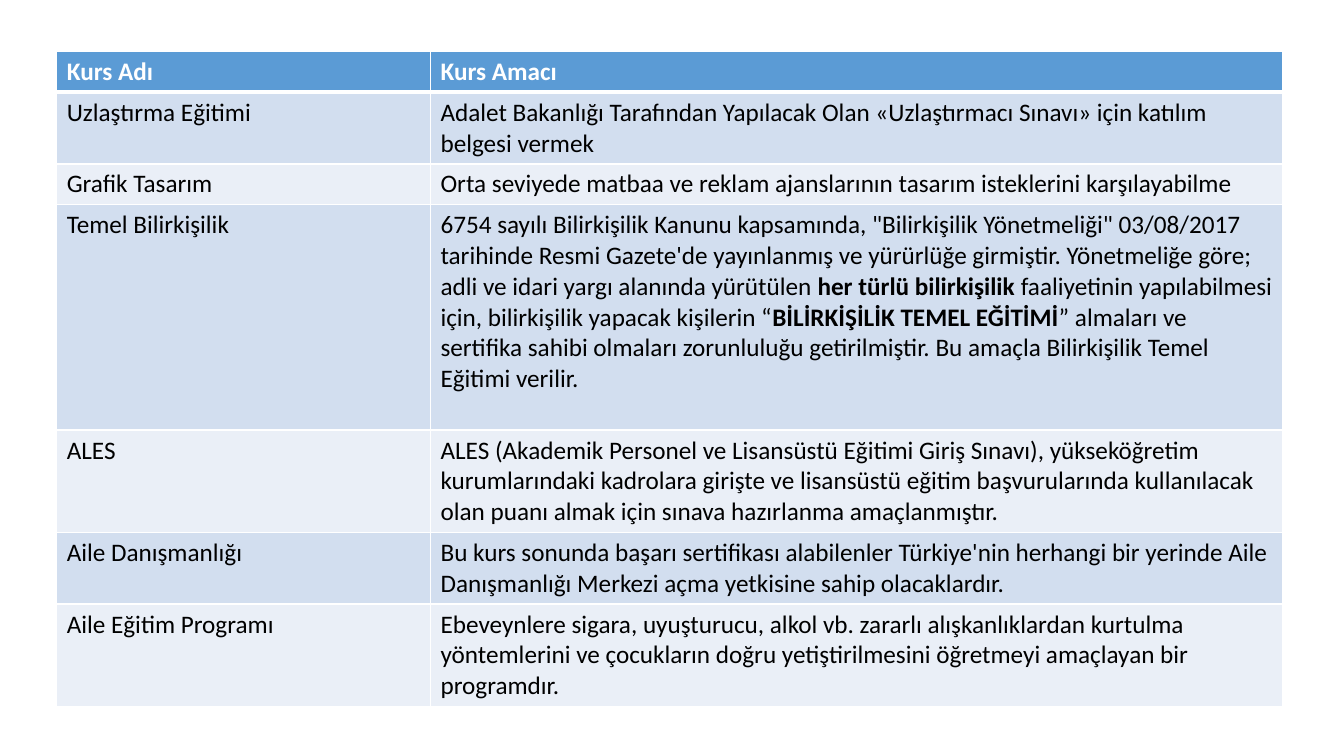
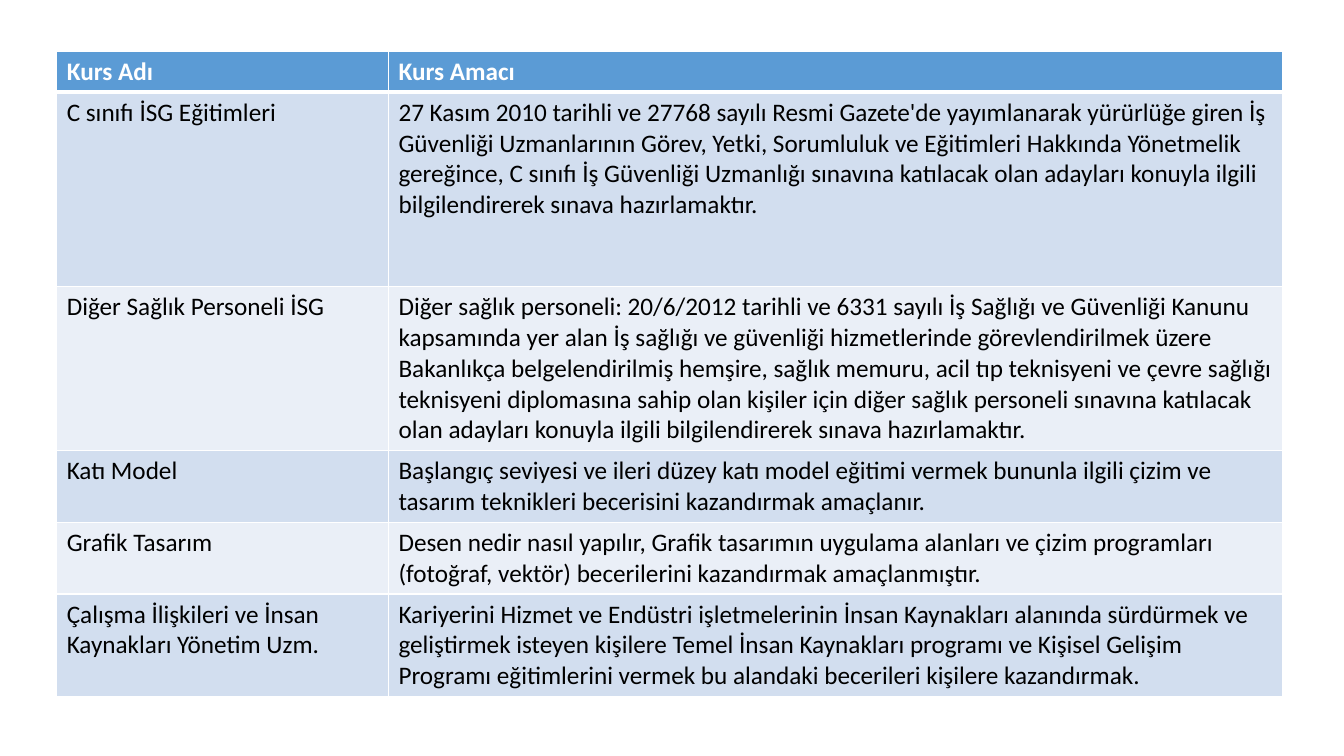
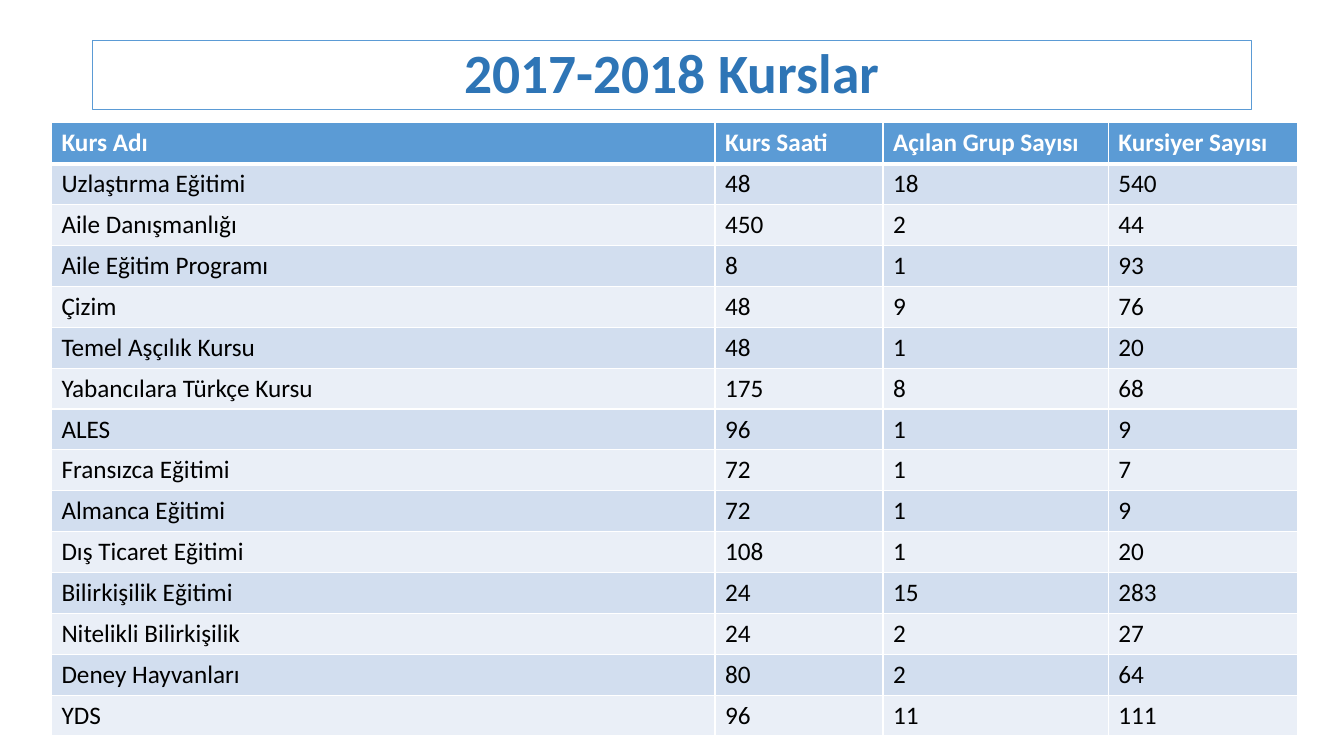
from pptx import Presentation
from pptx.dml.color import RGBColor
from pptx.enum import text as text_enum
from pptx.oxml import parse_xml
from pptx.oxml.ns import nsdecls
from pptx.util import Pt

# Shared style
FONT = "Calibri"
BODY_SIZE = 18
LINE_HEIGHT = 21.96
CELL_MARGINS = 7.2
WHITE = RGBColor(0xFF, 0xFF, 0xFF)
BLACK = RGBColor(0x00, 0x00, 0x00)
HEADER_BLUE = RGBColor(0x5B, 0x9B, 0xD5)
TITLE_BLUE = RGBColor(0x2E, 0x75, 0xB6)
BANDS = (RGBColor(0xD2, 0xDE, 0xEF), RGBColor(0xEA, 0xEF, 0xF7))
TITLE_ONLY, BLANK = 5, 6

# Content: "lines" is the height of each body row in text lines, ** marks bold
PURPOSE_HEADER = ("Kurs Adı", "Kurs Amacı")
SLIDES = [
    {
        "at": (40.5, 36.75),
        "widths": (267, 609),
        "header": PURPOSE_HEADER,
        "lines": (2, 1, 7, 3, 2, 3),
        "rows": [
            ("Uzlaştırma Eğitimi",
             "Adalet Bakanlığı Tarafından Yapılacak Olan «Uzlaştırmacı Sınavı» "
             "için katılım belgesi vermek"),
            ("Grafik Tasarım",
             "Orta seviyede matbaa ve reklam ajanslarının tasarım isteklerini "
             "karşılayabilme"),
            ("Temel Bilirkişilik",
             "6754 sayılı Bilirkişilik Kanunu kapsamında, \"Bilirkişilik "
             "Yönetmeliği\" 03/08/2017 tarihinde Resmi Gazete'de yayınlanmış ve "
             "yürürlüğe girmiştir. Yönetmeliğe göre; adli ve idari yargı alanında "
             "yürütülen **her türlü bilirkişilik** faaliyetinin yapılabilmesi "
             "için, bilirkişilik yapacak kişilerin “**BİLİRKİŞİLİK TEMEL EĞİTİMİ**” "
             "almaları ve sertifika sahibi olmaları zorunluluğu getirilmiştir. "
             "Bu amaçla Bilirkişilik Temel Eğitimi verilir."),
            ("ALES",
             "ALES (Akademik Personel ve Lisansüstü Eğitimi Giriş Sınavı), "
             "yükseköğretim kurumlarındaki kadrolara girişte ve lisansüstü eğitim "
             "başvurularında kullanılacak olan puanı almak için sınava hazırlanma "
             "amaçlanmıştır."),
            ("Aile Danışmanlığı",
             "Bu kurs sonunda başarı sertifikası alabilenler Türkiye'nin herhangi "
             "bir yerinde Aile Danışmanlığı Merkezi açma yetkisine sahip "
             "olacaklardır."),
            ("Aile Eğitim Programı",
             "Ebeveynlere sigara, uyuşturucu, alkol vb. zararlı alışkanlıklardan "
             "kurtulma yöntemlerini ve çocukların doğru yetiştirilmesini öğretmeyi "
             "amaçlayan bir programdır."),
        ],
    },
    {
        "at": (40.5, 36.75),
        "widths": (237, 639),
        "header": PURPOSE_HEADER,
        "lines": (6, 5, 2, 2, 3),
        "rows": [
            ("C sınıfı İSG Eğitimleri",
             "27 Kasım 2010 tarihli ve 27768 sayılı Resmi Gazete'de yayımlanarak "
             "yürürlüğe giren İş Güvenliği Uzmanlarının Görev, Yetki, Sorumluluk "
             "ve Eğitimleri Hakkında Yönetmelik gereğince, C sınıfı İş Güvenliği "
             "Uzmanlığı sınavına katılacak olan adayları konuyla ilgili "
             "bilgilendirerek sınava hazırlamaktır."),
            ("Diğer Sağlık Personeli İSG",
             "Diğer sağlık personeli: 20/6/2012 tarihli ve 6331 sayılı İş Sağlığı "
             "ve Güvenliği Kanunu kapsamında yer alan İş sağlığı ve güvenliği "
             "hizmetlerinde görevlendirilmek üzere Bakanlıkça belgelendirilmiş "
             "hemşire, sağlık memuru, acil tıp teknisyeni ve çevre sağlığı "
             "teknisyeni diplomasına sahip olan kişiler için diğer sağlık "
             "personeli sınavına katılacak olan adayları konuyla ilgili "
             "bilgilendirerek sınava hazırlamaktır."),
            ("Katı Model",
             "Başlangıç seviyesi ve ileri düzey katı model eğitimi vermek bununla "
             "ilgili çizim ve tasarım teknikleri becerisini kazandırmak amaçlanır."),
            ("Grafik Tasarım",
             "Desen nedir nasıl yapılır, Grafik tasarımın uygulama alanları ve "
             "çizim programları (fotoğraf, vektör) becerilerini kazandırmak "
             "amaçlanmıştır."),
            ("Çalışma İlişkileri ve İnsan Kaynakları Yönetim Uzm.",
             "Kariyerini Hizmet ve Endüstri işletmelerinin İnsan Kaynakları "
             "alanında sürdürmek ve geliştirmek isteyen kişilere Temel İnsan "
             "Kaynakları programı ve Kişisel Gelişim Programı eğitimlerini vermek "
             "bu alandaki becerileri kişilere kazandırmak."),
        ],
    },
    {
        "title": "2017-2018 Kurslar",
        "at": (36.75, 87.75),
        "widths": (474, 120, 161, 135.5),
        "header": ("Kurs Adı", "Kurs Saati", "Açılan Grup Sayısı", "Kursiyer Sayısı"),
        "lines": (1,) * 14,
        "rows": [
            ("Uzlaştırma Eğitimi", 48, 18, 540),
            ("Aile Danışmanlığı", 450, 2, 44),
            ("Aile Eğitim Programı", 8, 1, 93),
            ("Çizim", 48, 9, 76),
            ("Temel Aşçılık Kursu", 48, 1, 20),
            ("Yabancılara Türkçe Kursu", 175, 8, 68),
            ("ALES", 96, 1, 9),
            ("Fransızca Eğitimi", 72, 1, 7),
            ("Almanca Eğitimi", 72, 1, 9),
            ("Dış Ticaret Eğitimi", 108, 1, 20),
            ("Bilirkişilik Eğitimi", 24, 15, 283),
            ("Nitelikli Bilirkişilik", 24, 2, 27),
            ("Deney Hayvanları", 80, 2, 64),
            ("YDS", 96, 11, 111),
        ],
    },
]


def write(frame, content, size=BODY_SIZE, color=BLACK, bold=False, align=None, spacing=None):
    """Fill a text frame; parts between ** are bold."""
    paragraph = frame.paragraphs[0]
    paragraph.alignment = align
    paragraph.line_spacing = spacing
    for index, part in enumerate(content.split("**")):
        run = paragraph.add_run()
        run.text = part
        run.font.name = FONT
        run.font.size = Pt(size)
        run.font.bold = bold or index % 2 == 1
        run.font.color.rgb = color


def add_borders(cell, top=1, bottom=1):
    properties = cell._tc.get_or_add_tcPr()
    for side, width in (("L", 1), ("R", 1), ("T", top), ("B", bottom)):
        properties.append(parse_xml(
            f'<a:ln{side} {nsdecls("a")} w="{Pt(width)}"><a:solidFill>'
            f'<a:srgbClr val="{WHITE}"/></a:solidFill></a:ln{side}>'))


def add_course_table(slide, at, widths, header, lines, rows):
    heights = [CELL_MARGINS + LINE_HEIGHT * count for count in (1, *lines)]
    left, top = at
    table = slide.shapes.add_table(
        len(heights), len(widths), Pt(left), Pt(top),
        Pt(sum(widths)), Pt(sum(heights))).table
    for column, width in zip(table.columns, widths):
        column.width = Pt(width)
    for row_index, values in enumerate([header, *rows]):
        is_header = row_index == 0
        table.rows[row_index].height = Pt(heights[row_index])
        for column_index, value in enumerate(values):
            cell = table.cell(row_index, column_index)
            add_borders(cell, top=3 if row_index == 1 else 1, bottom=3 if is_header else 1)
            cell.fill.solid()
            cell.fill.fore_color.rgb = HEADER_BLUE if is_header else BANDS[(row_index - 1) % 2]
            write(cell.text_frame, str(value), color=WHITE if is_header else BLACK, bold=is_header)


def format_title(title, content):
    title.left, title.top, title.width, title.height = Pt(66), Pt(28.75), Pt(828), Pt(49.75)
    title.line.color.rgb = HEADER_BLUE
    title.line.width = Pt(0.75)
    frame = title.text_frame
    frame.auto_size = text_enum.MSO_AUTO_SIZE.NONE
    frame.vertical_anchor = text_enum.MSO_ANCHOR.MIDDLE
    write(frame, content, size=39.6, color=TITLE_BLUE, bold=True,
          align=text_enum.PP_ALIGN.CENTER, spacing=0.9)


def main():
    presentation = Presentation()
    presentation.slide_width, presentation.slide_height = Pt(960), Pt(540)
    for content in SLIDES:
        title = content.get("title")
        layout = presentation.slide_layouts[TITLE_ONLY if title else BLANK]
        slide = presentation.slides.add_slide(layout)
        if title:
            format_title(slide.shapes.title, title)
        add_course_table(slide, content["at"], content["widths"], content["header"],
                         content["lines"], content["rows"])
    presentation.save("out.pptx")


if __name__ == "__main__":
    main()
